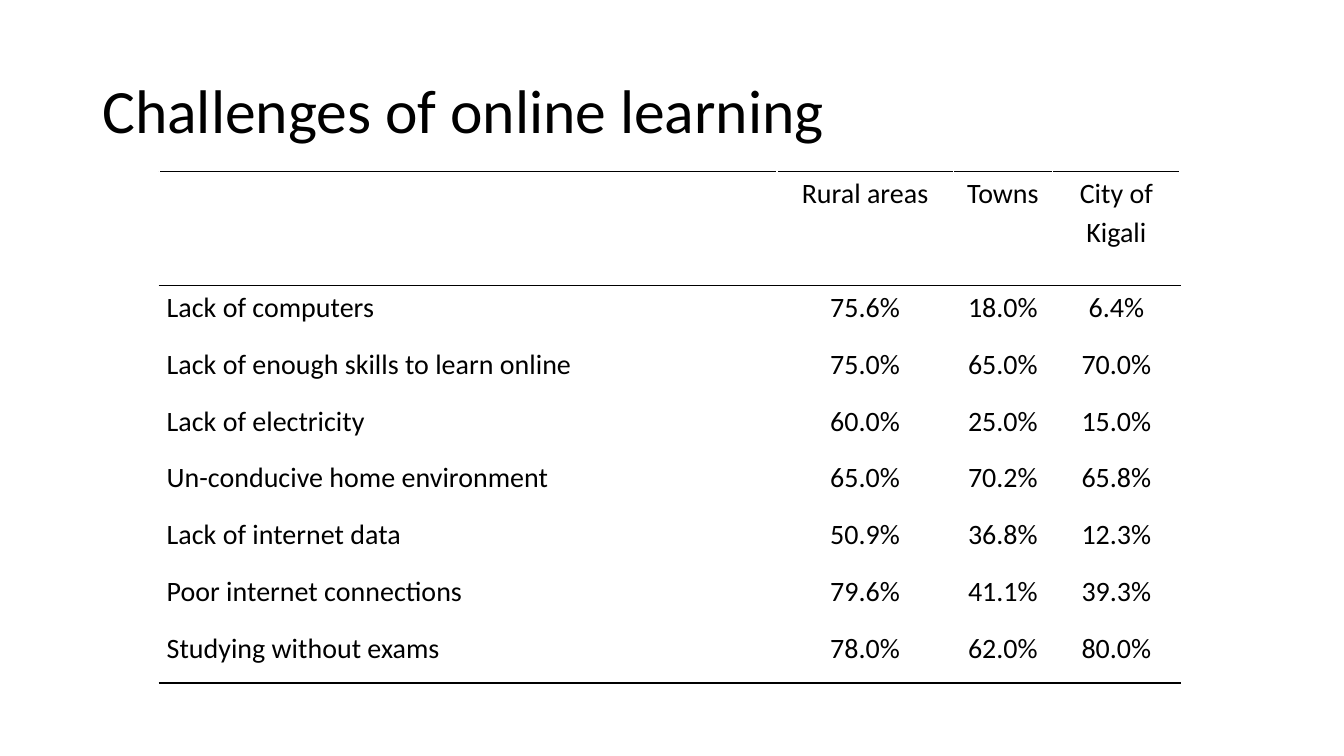
from lxml.etree import fromstring
from pptx import Presentation
from pptx.dml.color import RGBColor
from pptx.enum.text import MSO_ANCHOR, PP_ALIGN
from pptx.util import Cm, Pt

TITLE = "Challenges of online learning"
HEAD = ("", "Rural areas", "Towns", "City of Kigali")
ROWS = [
    ("Lack of computers", 75.6, 18.0, 6.4),
    ("Lack of enough skills to learn online", 75.0, 65.0, 70.0),
    ("Lack of electricity", 60.0, 25.0, 15.0),
    ("Un-conducive home environment", 65.0, 70.2, 65.8),
    ("Lack of internet data", 50.9, 36.8, 12.3),
    ("Poor internet connections", 79.6, 41.1, 39.3),
    ("Studying without exams", 78.0, 62.0, 80.0),
]
COLORS = {"ink": "000000"}
FONT = "Calibri"
WIDTHS = (15.57, 4.44, 2.51, 3.21)
HEAD_H, ROW_H = 2.88, 1.43
NS = "http://schemas.openxmlformats.org/drawingml/2006/main"


def write(frame, text, size, gap, align=PP_ALIGN.LEFT):
    """Put one styled paragraph in a text frame."""
    para = frame.paragraphs[0]
    para.text = text
    para.alignment = align
    para.line_spacing = gap
    for font in [para.font] + [run.font for run in para.runs]:
        font.name = FONT
        font.size = Pt(size)
        font.color.rgb = RGBColor.from_string(COLORS["ink"])


def rule(cell, sides):
    """Draw thin lines on the given sides of a cell."""
    props = cell._tc.get_or_add_tcPr()
    for spot, side in enumerate(sides):
        props.insert(spot, fromstring(
            f'<a:ln{side} xmlns:a="{NS}" w="{Pt(1)}"><a:solidFill>'
            f'<a:srgbClr val="{COLORS["ink"]}"/></a:solidFill></a:ln{side}>'))


def fill_table(slide):
    """Add the table of shares by place."""
    data = [HEAD] + [(row[0], *(f"{num:.1f}%" for num in row[1:])) for row in ROWS]
    last = len(data) - 1
    high = HEAD_H + ROW_H * last
    table = slide.shapes.add_table(
        len(data), len(HEAD), Cm(4.01), Cm(4.32), Cm(sum(WIDTHS)), Cm(high)).table
    table.first_row = table.horz_banding = False
    for col, wide in zip(table.columns, WIDTHS):
        col.width = Cm(wide)
    edges = {0: "TB", 1: "T", last: "B"}
    for r, line in enumerate(data):
        table.rows[r].height = Cm(ROW_H if r else HEAD_H)
        for c, text in enumerate(line):
            cell = table.cell(r, c)
            cell.margin_left = cell.margin_right = Cm(0.19)
            cell.margin_top = cell.margin_bottom = 0
            cell.fill.background()
            write(cell.text_frame, text, 20, 1.15,
                  PP_ALIGN.CENTER if c else PP_ALIGN.LEFT)
            rule(cell, edges.get(r, ""))


def main():
    """Build the slide and save it."""
    deck = Presentation()
    deck.slide_width, deck.slide_height = Cm(33.87), Cm(19.05)
    slide = deck.slides.add_slide(deck.slide_layouts[6])
    box = slide.shapes.add_textbox(Cm(2.33), Cm(1.01), Cm(29.21), Cm(3.68))
    box.text_frame.word_wrap = True
    box.text_frame.vertical_anchor = MSO_ANCHOR.MIDDLE
    write(box.text_frame, TITLE, 44, 0.9)
    fill_table(slide)
    deck.save("out.pptx")


if __name__ == "__main__":
    main()
